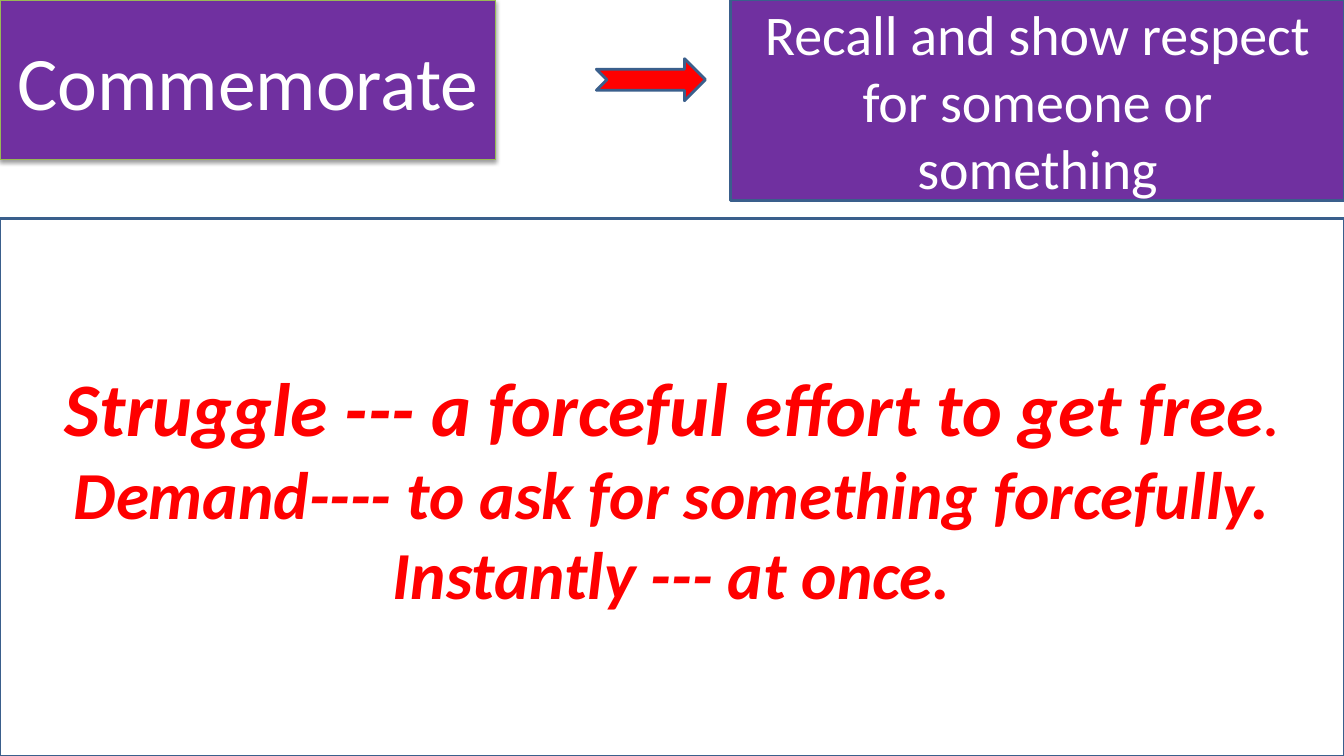
from dataclasses import dataclass

from lxml.etree import SubElement
from pptx import Presentation
from pptx.dml.color import RGBColor as Rgb
from pptx.enum.shapes import MSO_SHAPE as Kind
from pptx.enum.text import MSO_ANCHOR as Anchor, MSO_AUTO_SIZE as Fit, PP_ALIGN as Align
from pptx.oxml.ns import qn
from pptx.util import Cm, Pt


@dataclass
class Theme:
    font: str = "Calibri"
    purple: str = "7030A0"
    red: str = "FF0000"
    white: str = "FFFFFF"
    edge: str = "3A5F8C"
    green: str = "98B955"
    big: int = 54
    mid: int = 48
    small: int = 40


def paint(shape, box, fill, edge=Theme.edge, width=2):
    """Place a shape and set its fill and outline."""
    shape.left, shape.top, shape.width, shape.height = map(Cm, box)
    shape.shadow.inherit = False
    shape.fill.solid()
    shape.fill.fore_color.rgb = Rgb.from_string(fill)
    shape.line.color.rgb = Rgb.from_string(edge)
    shape.line.width = Pt(width)


def write(shape, lines, color, strong=False):
    """Fill a shape with centred lines, each a list of (text, size) runs."""
    frame = shape.text_frame
    frame.word_wrap = True
    frame.auto_size = Fit.NONE
    frame.vertical_anchor = Anchor.MIDDLE
    for i, line in enumerate(lines):
        para = frame.add_paragraph() if i else frame.paragraphs[0]
        para.alignment = Align.CENTER
        for text, size in line:
            run = para.add_run()
            run.text = text
            font = run.font
            font.name, font.size = theme.font, Pt(size)
            font.bold = font.italic = strong
            font.color.rgb = Rgb.from_string(color)


theme = Theme()
wide, high = 33.87, 19.05
deck = Presentation()
deck.slide_width, deck.slide_height = Cm(wide), Cm(high)
slide = deck.slides.add_slide(deck.slide_layouts[5])
shapes = slide.shapes

# Word to learn, with a soft shadow below
word = shapes.title
paint(word, (0, 0, 12.5, 4.02), theme.purple, theme.green, 0.75)
write(word, [[("Commemorate", theme.big)]], theme.white)
effect = word.element.spPr.find(qn("a:effectLst"))
shade = SubElement(effect, qn("a:outerShdw"), blurRad=str(Pt(3.1)),
                   dist=str(Pt(1.6)), dir="5400000", rotWithShape="0")
black = SubElement(shade, qn("a:srgbClr"), val="000000")
SubElement(black, qn("a:alpha"), val="38000")

# Its meaning
left = 18.42
sense = shapes.add_shape(Kind.RECTANGLE, 0, 0, 0, 0)
paint(sense, (left, 0, wide - left, 5.05), theme.purple)
write(sense, [[("Recall and show respect for someone or something", theme.small)]],
      theme.white)

# More words
top = 5.5
panel = shapes.add_shape(Kind.RECTANGLE, 0, 0, 0, 0)
paint(panel, (0, top, wide, high - top), theme.white)
write(panel, [
    [("Struggle --- a forceful effort to get free", theme.big), (".", theme.small)],
    [("Demand---- to ask for something forcefully.", theme.mid)],
    [("Instantly --- at once.", theme.mid)],
], theme.red, strong=True)

# Arrow from word to meaning
arrow = shapes.add_shape(Kind.NOTCHED_RIGHT_ARROW, 0, 0, 0, 0)
paint(arrow, (15.03, 1.48, 2.75, 1.06), theme.red)

deck.save("out.pptx")
